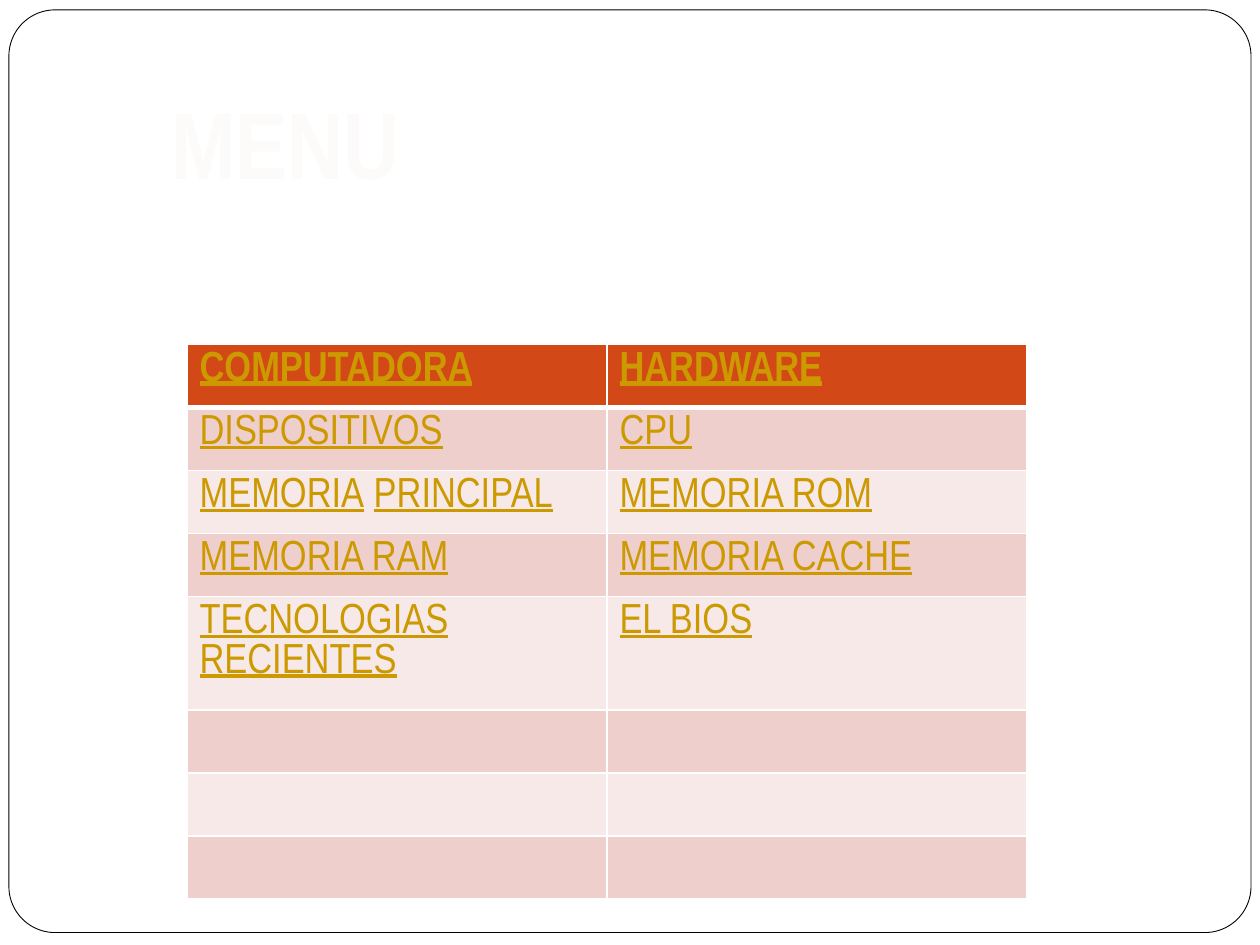
from dataclasses import dataclass
from lxml import etree
from pptx import Presentation, util as u
from pptx.dml.color import RGBColor as Rgb
from pptx.enum import shapes, text
from pptx.oxml import ns


@dataclass(frozen=True)
class Theme:
    face: str = "Arial Narrow"
    white: str = "FFFFFF"
    line: str = "000000"
    title: str = "FDFBFA"
    link: str = "CC9900"
    head: str = "D34817"
    odd: str = "EFCFCC"
    even: str = "F7E9E8"
    big: int = 54
    body: int = 24


LOOK = Theme()
MENU = [
    (["COMPUTADORA"], ["HARDWARE"]),
    (["DISPOSITIVOS"], ["CPU"]),
    (["MEMORIA", " ", "PRINCIPAL"], ["MEMORIA ROM"]),
    (["MEMORIA RAM"], ["MEMORIA CACHE"]),
    (["TECNOLOGIAS RECIENTES"], ["EL BIOS"]),
    ([], []),
    ([], []),
    ([], []),
]


def paint(fill, tint):
    fill.solid()
    fill.fore_color.rgb = Rgb.from_string(tint)


def style(font, size, tint, bold):
    font.name = LOOK.face
    font.size = u.Pt(size)
    font.bold = bold
    font.color.rgb = Rgb.from_string(tint)


def edge(side, width):
    line = etree.Element(ns.qn(f"a:{side}"), w=str(u.Pt(width)))
    fill = etree.SubElement(line, ns.qn("a:solidFill"))
    etree.SubElement(fill, ns.qn("a:srgbClr"), val=LOOK.white)
    return line


def add_frame(slide, x, y, w, h):
    frame = slide.shapes.add_shape(
        shapes.MSO_SHAPE.ROUNDED_RECTANGLE, x, y, w, h)
    frame.adjustments[0] = 0.05
    frame.shadow.inherit = False
    paint(frame.fill, LOOK.white)
    paint(frame.line.fill, LOOK.line)
    frame.line.width = u.Pt(0.5)
    slide.shapes.title.element.addprevious(frame.element)


def add_title(slide, x, y, w, h):
    title = slide.shapes.title
    title.left, title.top, title.width, title.height = x, y, w, h
    body = title.text_frame
    body.text = "MENU"
    body.vertical_anchor = text.MSO_ANCHOR.MIDDLE
    para = body.paragraphs[0]
    para.alignment = text.PP_ALIGN.LEFT
    style(para.font, LOOK.big, LOOK.title, True)


def fill_cell(cell, words, row):
    head = row == 0
    paint(cell.fill, LOOK.head if head else LOOK.odd if row % 2 else LOOK.even)
    para = cell.text_frame.paragraphs[0]
    para.line_spacing = 1.0
    style(para.font, LOOK.body, LOOK.link, head)
    for word in words:
        run = para.add_run()
        run.text = word
        run.font.underline = word != " "
    props = cell.fill._xPr
    for i, side in enumerate(("lnL", "lnR", "lnT", "lnB")):
        thick = side == "lnB" and head or side == "lnT" and row == 1
        props.insert(i, edge(side, 3 if thick else 1))


def add_menu(slide, x, y, w, h):
    rows, cols = len(MENU), len(MENU[0])
    tall = 4
    extra = u.Cm(1.01)
    step = (h - extra) // rows
    grid = slide.shapes.add_table(rows, cols, x, y, w, h).table
    for col in grid.columns:
        col.width = w // cols
    for r, line in enumerate(MENU):
        grid.rows[r].height = step + (extra if r == tall else 0)
        for c, words in enumerate(line):
            fill_cell(grid.cell(r, c), words, r)


def main():
    deck = Presentation()
    deck.slide_width, deck.slide_height = u.Cm(25.4), u.Cm(19.05)
    slide = deck.slides.add_slide(deck.slide_layouts[5])
    add_frame(slide, u.Cm(0.18), u.Cm(0.2), u.Cm(25.04), u.Cm(18.6))
    add_title(slide, u.Cm(3.2), u.Cm(1.35), u.Cm(18), u.Cm(3))
    add_menu(slide, u.Cm(3.77), u.Cm(6.94), u.Cm(16.93), u.Cm(11.19))
    deck.save("out.pptx")


if __name__ == "__main__":
    main()
